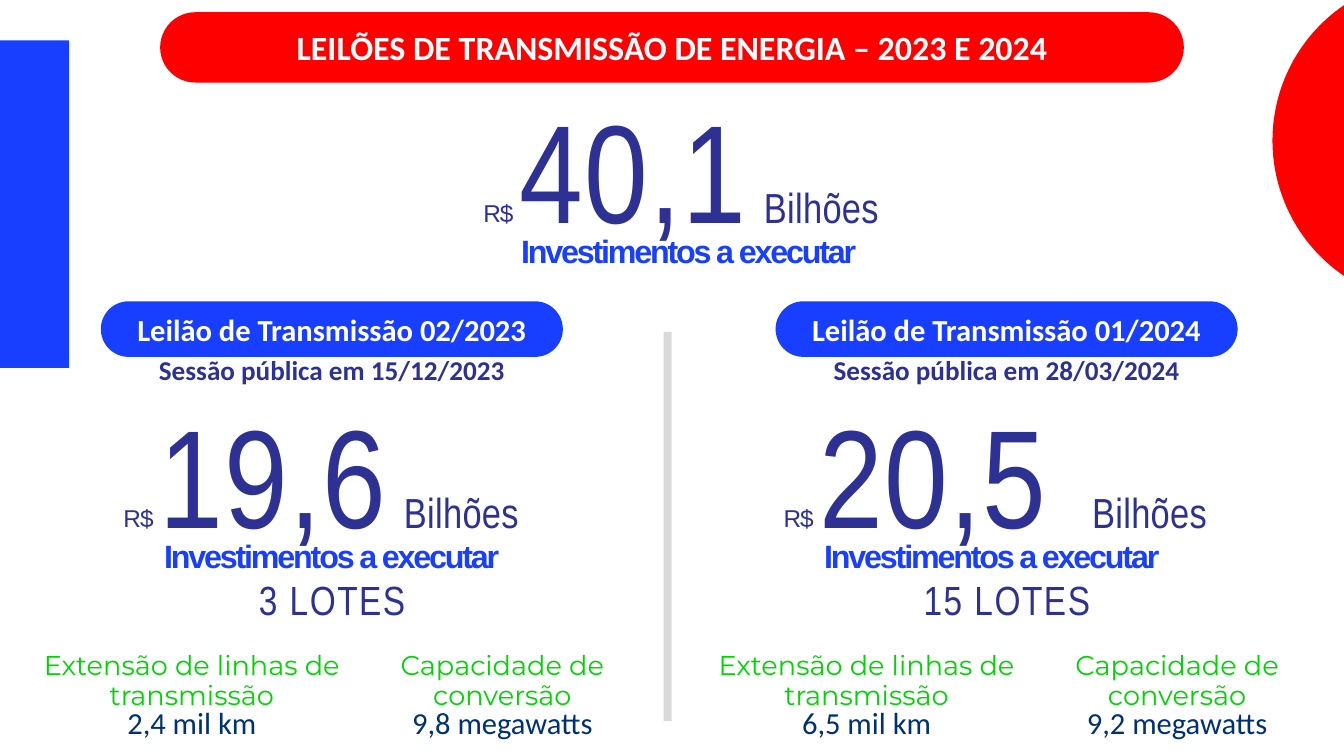
import math
from dataclasses import dataclass
from typing import NamedTuple

import pptx
import pptx.dml.color
import pptx.enum.shapes
import pptx.enum.text
import pptx.util

Inches = pptx.util.Inches
SHAPE = pptx.enum.shapes.MSO_SHAPE
ANCHOR = pptx.enum.text.MSO_ANCHOR
ALIGN = pptx.enum.text.PP_ALIGN
DEFAULT_INSETS = (0.1, 0.05, 0.1, 0.05)
TIGHT_INSETS = (0, 0.02, 0, 0)
EVEN_INSETS = (0.06, 0.06, 0.06, 0.06)


class Box(NamedTuple):
    left: float
    top: float
    width: float
    height: float

    def inner(self, left, top, width, height):
        """Place a box relative to this one's top left corner."""
        return Box(self.left + left, self.top + top, width, height)

    def lengths(self):
        return [Inches(value) for value in self]


@dataclass(frozen=True)
class Style:
    font: str
    size: float
    color: str
    bold: bool = False
    spacing: float = 0
    baseline: int = 0


class Theme:
    red = "FF0000"
    blue = "183EFF"
    grey = "D9D9D9"
    navy = "2D3193"
    title = Style("Calibri", 40, "FFFFFF", bold=True)
    auction = Style("Calibri", 36, "FFFFFF", bold=True)
    session = Style("Calibri", 32, navy, bold=True)
    currency = Style("Arial", 49.5, navy, spacing=-1.2, baseline=2)
    amount = Style("Arial Narrow", 164.5, navy, spacing=1.8)
    unit = Style("Arial Narrow", 49.5, navy, spacing=0.4)
    investment = Style("Arial", 38, blue, bold=True, spacing=-2.6)
    lots = Style("Arial Narrow", 48, navy, spacing=1.8)
    metric = Style("Montserrat", 32, "00D402")
    metric_value = Style("Calibri", 36, "003173")
    metric_leading = 35


def paint(shape, color):
    shape.shadow.inherit = False
    shape.fill.solid()
    shape.fill.fore_color.rgb = pptx.dml.color.RGBColor.from_string(color)
    shape.line.fill.background()


def format_run(run, style):
    run.font.name = style.font
    run.font.size = pptx.util.Pt(style.size)
    run.font.bold = style.bold
    run.font.color.rgb = pptx.dml.color.RGBColor.from_string(style.color)
    properties = run._r.get_or_add_rPr()
    if style.spacing:
        properties.set("spc", str(round(style.spacing * 100)))
    if style.baseline:
        properties.set("baseline", str(style.baseline * 1000))


def write(frame, lines, align=ALIGN.CENTER, anchor=ANCHOR.TOP,
          insets=DEFAULT_INSETS, leading=None):
    """Fill a text frame; each line is a list of (text, style) runs."""
    frame.word_wrap = True
    frame.auto_size = pptx.enum.text.MSO_AUTO_SIZE.NONE
    frame.vertical_anchor = anchor
    (frame.margin_left, frame.margin_top,
     frame.margin_right, frame.margin_bottom) = map(Inches, insets)
    for index, line in enumerate(lines):
        paragraph = frame.add_paragraph() if index else frame.paragraphs[0]
        paragraph.alignment = align
        if leading:
            paragraph.line_spacing = pptx.util.Pt(leading)
        for text, style in line:
            run = paragraph.add_run()
            run.text = text
            format_run(run, style)


def add_text(slide, box, lines, **layout):
    write(slide.shapes.add_textbox(*box.lengths()).text_frame, lines, **layout)


def add_block(slide, box, kind, color):
    block = slide.shapes.add_shape(kind, *box.lengths())
    paint(block, color)
    return block


def add_pill(slide, box, color):
    pill = add_block(slide, box, SHAPE.ROUNDED_RECTANGLE, color)
    pill.adjustments[0] = 0.5
    return pill


def add_edge_decoration(slide, box):
    """Draw the blue bar on the left edge and the cut red disc on the right."""
    add_block(slide, box.inner(0, 0.66, 1.13, 5.36), SHAPE.RECTANGLE, Theme.blue)

    radius, center_x, center_y = 2.68, box.left + 23.5, box.top + 2.3
    half_angle = math.acos((center_x - box.left - box.width) / radius)
    steps = 60
    angles = [half_angle * (2 * step / steps - 1) for step in range(steps + 1)]
    arc = [(Inches(center_x - radius * math.cos(angle)),
            Inches(center_y + radius * math.sin(angle))) for angle in angles]
    disc = slide.shapes.build_freeform(*arc[0])
    disc.add_line_segments(arc[1:], close=True)
    paint(disc.convert_to_shape(), Theme.red)


def add_header(slide, box, text):
    pill = add_pill(slide, box, Theme.red)
    title = slide.shapes.title
    title.left, title.top, title.width, title.height = box.inner(
        0.54, 0.21, 15.67, 0.69).lengths()
    write(title.text_frame, [[(text, Theme.title)]], insets=TIGHT_INSETS)
    pill.element.addnext(title.element)


def add_investment(slide, box, amount, unit_left=4.59, label_left=0):
    add_text(slide, box.inner(0, 0, 4.91, 2.79),
             [[("R$ ", Theme.currency), (amount, Theme.amount)]],
             align=ALIGN.LEFT, insets=TIGHT_INSETS)
    add_text(slide, box.inner(unit_left, 1.61, 2.22, 0.85),
             [[("Bilhões", Theme.unit)]], align=ALIGN.LEFT, insets=(0, 0.01, 0, 0))
    add_text(slide, box.inner(label_left, 2.39, 6.81, 0.74),
             [[("Investimentos a executar", Theme.investment)]])


def add_metric(slide, box, label, value):
    add_text(slide, box, [[(label, Theme.metric)], [(value, Theme.metric_value)]],
             anchor=ANCHOR.MIDDLE, insets=EVEN_INSETS, leading=Theme.metric_leading)


def add_auction(slide, box, auction):
    pill = add_pill(slide, box.inner(1.65, 0, 7.56, 0.91), Theme.blue)
    write(pill.text_frame, [[(auction["name"], Theme.auction)]],
          anchor=ANCHOR.MIDDLE, insets=EVEN_INSETS)
    add_text(slide, box.inner(1.66, 0.8, 7.54, 0.64),
             [[(auction["session"], Theme.session)]])
    add_investment(slide, box.inner(auction["amount_left"], 1.41, 6.81, 3.13),
                   auction["amount"], auction["unit_left"])
    add_text(slide, box.inner(3.8, 4.43, 3.27, 0.91), [[(auction["lots"], Theme.lots)]])
    add_metric(slide, box.inner(0.61, 5.67, 5.06, 1.58),
               "Extensão de linhas de transmissão", auction["extension"])
    add_metric(slide, box.inner(6.19, 5.67, 4.06, 1.58),
               "Capacidade de conversão", auction["capacity"])


AUCTIONS = [
    {"name": "Leilão de Transmissão 02/2023", "session": "Sessão pública em 15/12/2023",
     "amount": "19,6", "amount_left": 2.02, "unit_left": 4.59,
     "lots": "3 LOTES", "extension": "2,4 mil km", "capacity": "9,8 megawatts"},
    {"name": "Leilão de Transmissão 01/2024", "session": "Sessão pública em 28/03/2024",
     "amount": "20,5", "amount_left": 1.78, "unit_left": 5.05,
     "lots": "15 LOTES", "extension": "6,5 mil km", "capacity": "9,2 megawatts"},
]


def main():
    page = Box(0, 0, 21.99, 12.37)
    deck = pptx.Presentation()
    deck.slide_width, deck.slide_height = Inches(page.width), Inches(page.height)
    slide = deck.slides.add_slide(deck.slide_layouts.get_by_name("Title Only"))

    add_edge_decoration(slide, page)
    add_header(slide, Box(2.62, 0.2, 16.75, 1.15),
               "LEILÕES DE TRANSMISSÃO DE ENERGIA – 2023 E 2024")
    add_investment(slide, Box(7.91, 1.35, 6.81, 3.13), "40,1", label_left=-0.05)
    add_block(slide, Box(10.86, 5.43, 0.13, 6.37), SHAPE.RECTANGLE, Theme.grey)
    for column, auction in enumerate(AUCTIONS):
        add_auction(slide, Box(11.04 * column, 4.93, 10.86, 7.25), auction)

    deck.save("out.pptx")


if __name__ == "__main__":
    main()
